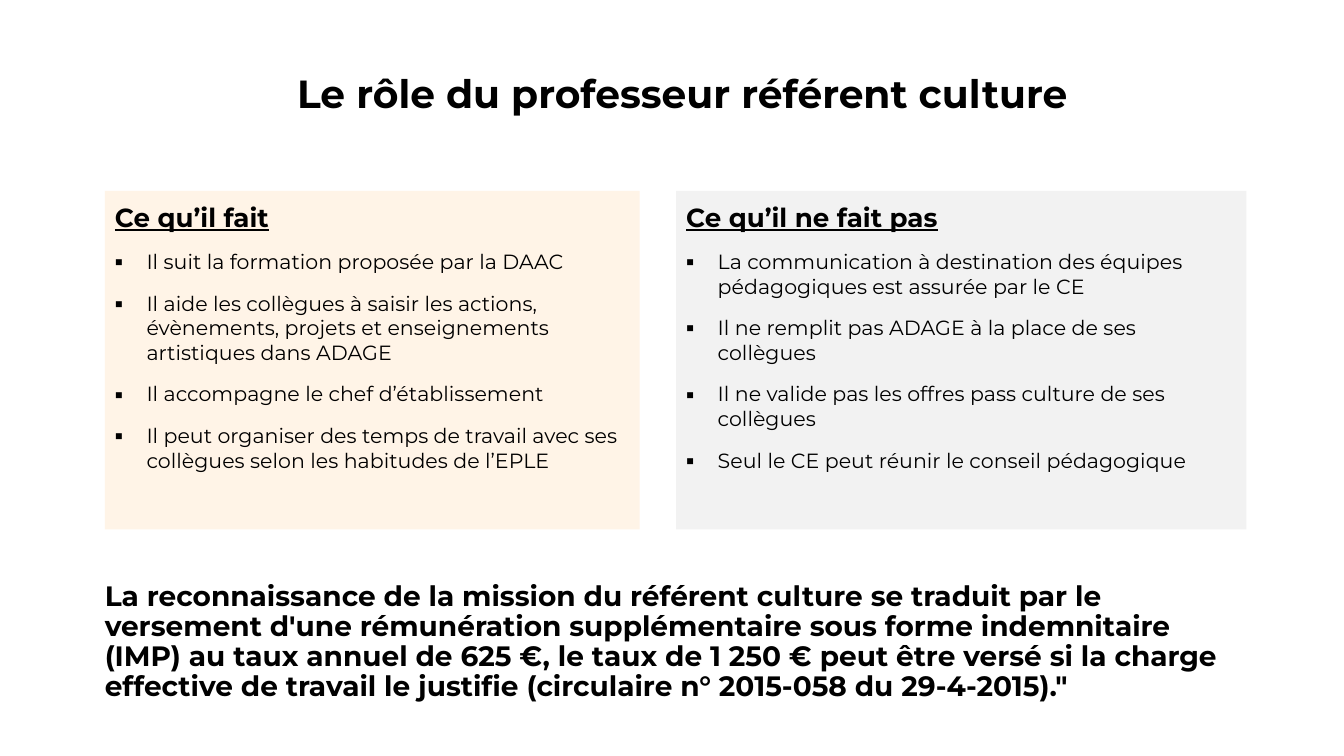
from dataclasses import dataclass

from lxml import etree
from pptx import Presentation
from pptx import util as u
from pptx.dml.color import RGBColor
from pptx.enum import text
from pptx.oxml import ns

PX = 4572  # EMU per px, 200 px to the inch


@dataclass(frozen=True)
class Theme:
    font: str = "Montserrat"
    ink: str = "000000"
    warm: str = "FFF4E7"
    gray: str = "F2F2F2"
    title: int = 21
    note: int = 15
    head: int = 14
    item: int = 11


@dataclass(frozen=True)
class Box:
    left: int
    top: int
    width: int
    height: int

    def emu(self) -> list[int]:
        return [n * PX for n in (self.left, self.top, self.width, self.height)]


@dataclass(frozen=True)
class Panel:
    box: Box
    fill: str
    head: str
    items: tuple[str, ...]


THEME = Theme()
TITLE = "Le rôle du professeur référent culture"
NOTE = (
    "La reconnaissance de la mission du référent culture se traduit par le "
    "versement d'une rémunération supplémentaire sous forme indemnitaire (IMP) "
    "au taux annuel de 625 €, le taux de 1 250 € peut être versé si la charge "
    "effective de travail le justifie (circulaire n° 2015-058 du 29-4-2015).\""
)
PANELS = (
    Panel(Box(156, 284, 796, 504), THEME.warm, "Ce qu’il fait", (
        "Il suit la formation proposée par la DAAC",
        "Il aide les collègues à saisir les actions, évènements, projets et "
        "enseignements artistiques dans ADAGE",
        "Il accompagne le chef d’établissement",
        "Il peut organiser des temps de travail avec ses collègues selon les "
        "habitudes de l’EPLE",
    )),
    Panel(Box(1006, 284, 849, 504), THEME.gray, "Ce qu’il ne fait pas", (
        "La communication à destination des équipes pédagogiques est assurée par le CE",
        "Il ne remplit pas ADAGE à la place de ses collègues",
        "Il ne valide pas les offres pass culture de ses collègues",
        "Seul le CE peut réunir le conseil pédagogique",
    )),
)


def place(shape, box: Box, inset: int = 0):
    """Move a shape and return its text frame, ready to fill."""
    shape.left, shape.top, shape.width, shape.height = box.emu()
    frame = shape.text_frame
    frame.word_wrap = True
    frame.auto_size = text.MSO_AUTO_SIZE.NONE
    frame.vertical_anchor = text.MSO_ANCHOR.TOP
    frame.margin_left = frame.margin_right = inset * PX
    frame.margin_top = frame.margin_bottom = inset * PX
    return frame


def write(para, words: str, size: int, bold: bool = False, line: bool = False,
          space: float = 1.0, before: int = 0) -> None:
    para.alignment = text.PP_ALIGN.LEFT
    para.line_spacing = space
    para.space_before = u.Pt(before)
    run = para.add_run()
    run.text = words
    font = run.font
    font.name, font.size = THEME.font, u.Pt(size)
    font.bold, font.underline = bold, line
    font.color.rgb = RGBColor.from_string(THEME.ink)


def mark(para, char: str = "", hang: int = 0) -> None:
    """Set the bullet and hanging indent; no char means no bullet."""
    props = para._p.get_or_add_pPr()
    props.set("marL", str(hang * PX))
    props.set("indent", str(-hang * PX))
    if not char:
        etree.SubElement(props, ns.qn("a:buNone"))
        return
    color = etree.SubElement(props, ns.qn("a:buClr"))
    etree.SubElement(color, ns.qn("a:srgbClr"), val=THEME.ink)
    etree.SubElement(props, ns.qn("a:buFont"), typeface=THEME.font)
    etree.SubElement(props, ns.qn("a:buChar"), char=char)


def draw(shape, panel: Panel) -> None:
    frame = place(shape, panel.box, 15)
    shape.fill.solid()
    shape.fill.fore_color.rgb = RGBColor.from_string(panel.fill)
    head = frame.paragraphs[0]
    mark(head)
    write(head, panel.head, THEME.head, bold=True, line=True)
    for item in panel.items:
        para = frame.add_paragraph()
        mark(para, "▪", 47)
        write(para, item, THEME.item, before=9)


def main() -> None:
    deck = Presentation()
    deck.slide_width, deck.slide_height = 2000 * PX, 1125 * PX
    slide = deck.slides.add_slide(deck.slide_layouts[3])
    title, *bodies = slide.placeholders

    # Title
    frame = place(title, Box(442, 111, 1160, 86))
    write(frame.paragraphs[0], TITLE, THEME.title, bold=True, space=0.9)

    # Two panels side by side
    for body, panel in zip(bodies, PANELS):
        draw(body, panel)

    # Closing note
    box = Box(156, 866, 1706, 198)
    frame = place(slide.shapes.add_textbox(*box.emu()), box)
    write(frame.paragraphs[0], NOTE, THEME.note, bold=True, space=0.9)

    deck.save("out.pptx")


if __name__ == "__main__":
    main()
